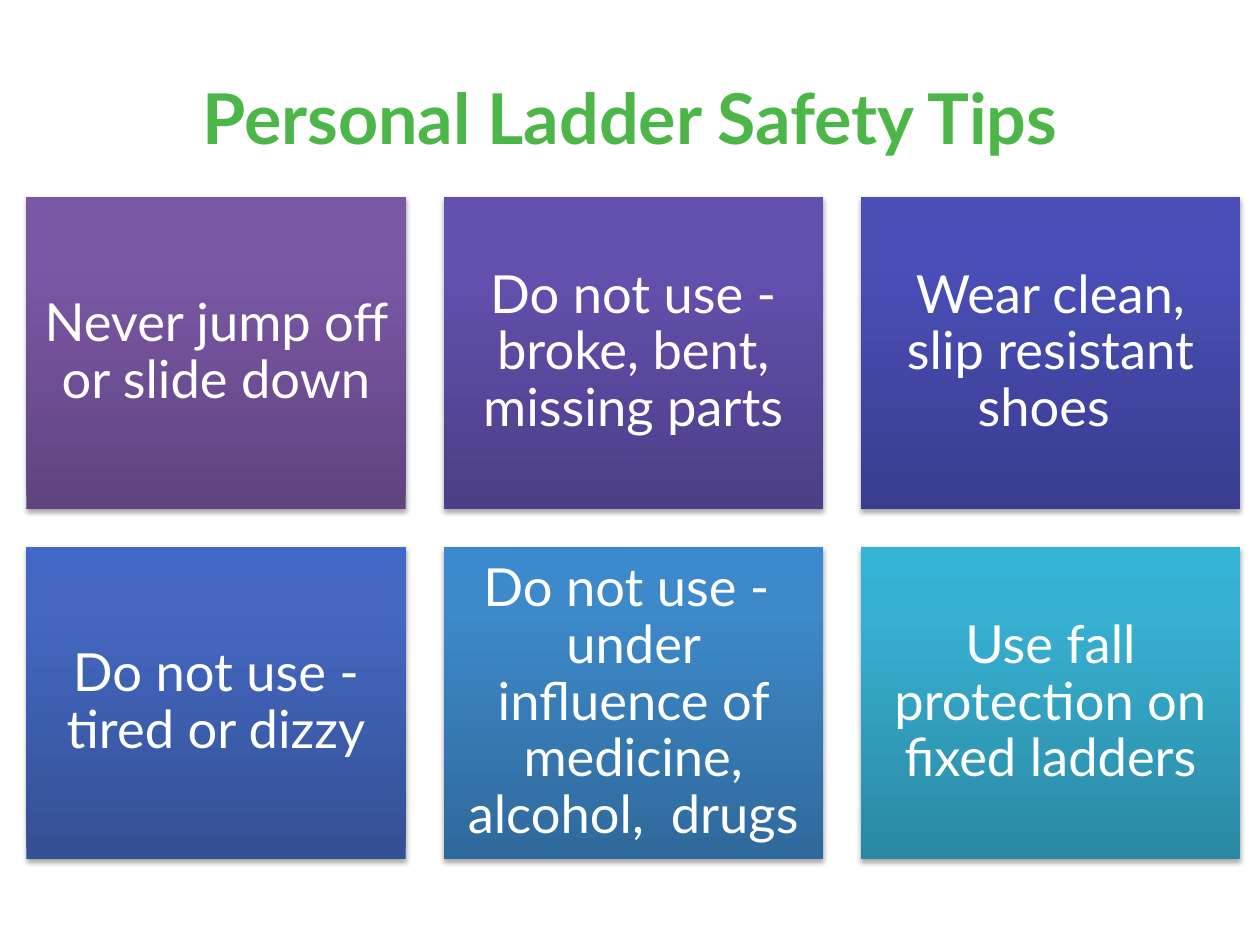
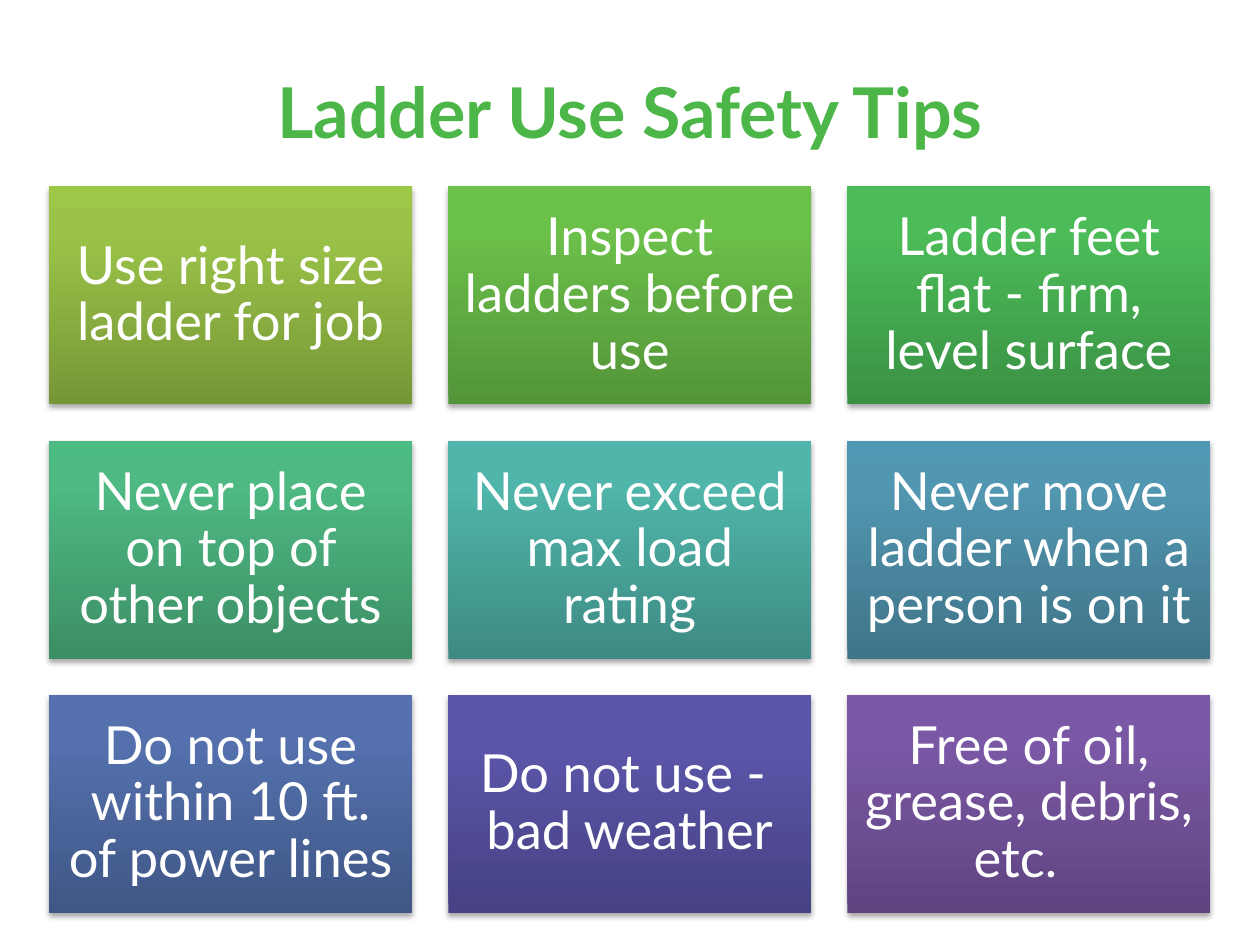
from lxml import etree
from pptx import Presentation
from pptx import util as u
from pptx.dml.color import RGBColor
from pptx.enum import shapes, text
from pptx.oxml.ns import qn

FONT = "Lato"
TITLE_GREEN = "4CB748"
WHITE = "FFFFFF"
COLUMNS = 3
GAP_SHARE = 0.1  # gap between tiles, as a share of tile width

# Each tile: text, then gradient colours from bottom to top
PERSONAL_TIPS = [
    ("Never jump off or slide down", "5F4480", "7B58A6", "7C57A8"),
    ("Do not use - broke, bent, missing parts", "4D3E87", "6451AF", "6450B2"),
    ("Wear clean, slip resistant shoes ", "393D8E", "4A4FB8", "484EBB"),
    ("Do not use - tired or dizzy", "345094", "4468C1", "4168C4"),
    ("Do not use -  under influence of medicine, alcohol,  drugs",
     "2F699B", "3D89C9", "3B8ACD"),
    ("Use fall protection on fixed ladders", "2A88A2", "37B1D2", "34B4D6"),
]
USE_TIPS = [
    ("Use right size ladder for job", "779737", "9BC348", "9DC746"),
    ("Inspect ladders before use", "539439", "6BC04A", "6BC348"),
    ("Ladder feet flat - firm, level surface", "3A9144", "4CBC58", "4ABF57"),
    ("Never place on top of other objects", "3C8E65", "4EB983", "4CBC84"),
    ("Never exceed max load rating", "3D8B83", "50B5AA", "4EB8AC"),
    ("Never move ladder when a person is on it", "3F7489", "5297B1", "5098B4"),
    ("Do not use within 10 ft. of power lines", "405786", "5471AE", "5271B0"),
    ("Do not use -  bad weather", "464283", "5B56AA", "5A55AC"),
    ("Free of oil, grease, debris, etc.  ", "5F4480", "7B58A6", "7C57A8"),
]


def rgb(value):
    return RGBColor.from_string(value)


def add_child(parent, tag, **attributes):
    return etree.SubElement(parent, qn(tag), attributes)


def place(sp, left, top, width, height):
    sp.left, sp.top, sp.width, sp.height = map(u.Inches, (left, top, width, height))


def write(sp, words, size, color, bold=False):
    tf = sp.text_frame
    tf.text = words
    tf.word_wrap = True
    tf.auto_size = text.MSO_AUTO_SIZE.NONE
    tf.vertical_anchor = text.MSO_ANCHOR.MIDDLE
    p = tf.paragraphs[0]
    p.alignment = text.PP_ALIGN.CENTER
    font = p.runs[0].font
    font.name, font.size, font.bold = FONT, u.Pt(size), bold
    font.color.rgb = rgb(color)
    return tf


def fill_gradient(sp, colors):
    """Run the colours upwards, with stops at 0, 80 and 100 %."""
    sp.fill.gradient()
    sp.fill.gradient_angle = 90
    stops = sp._element.spPr.find(qn("a:gradFill")).find(qn("a:gsLst"))
    for stop in list(stops):
        stops.remove(stop)
    for percent, color in zip((0, 80, 100), colors):
        stop = add_child(stops, "a:gs", pos=str(percent * 1000))
        add_child(stop, "a:srgbClr", val=color)


def drop_shadow(sp):
    sp.shadow.inherit = False
    effects = sp._element.spPr.find(qn("a:effectLst"))
    shadow = add_child(effects, "a:outerShdw", blurRad=str(u.Pt(3.1)),
                       dist=str(u.Pt(1.8)), dir="5400000", rotWithShape="0")
    color = add_child(shadow, "a:srgbClr", val="000000")
    add_child(color, "a:alpha", val="35000")


def add_tile(slide, box, words, colors, inset):
    sp = slide.shapes.add_shape(shapes.MSO_SHAPE.RECTANGLE, 0, 0, 0, 0)
    place(sp, *box)
    fill_gradient(sp, colors)
    sp.line.fill.background()
    drop_shadow(sp)
    tf = write(sp, words, 30, WHITE)
    tf.paragraphs[0].line_spacing = 0.9
    tf.margin_left = tf.margin_right = u.Inches(inset)
    tf.margin_top = tf.margin_bottom = u.Inches(inset)


def add_tips_slide(prs, title, title_top, tips, left, top, width, height, inset):
    slide = prs.slides.add_slide(prs.slide_layouts.get_by_name("Title Only"))
    gap = GAP_SHARE * width
    for i, (words, *colors) in enumerate(tips):
        row, column = divmod(i, COLUMNS)
        box = (left + column * (width + gap), top + row * (height + gap), width, height)
        add_tile(slide, box, words, colors, inset)
    place(slide.shapes.title, 0.5, title_top, 9, 1.25)
    write(slide.shapes.title, title, 40, TITLE_GREEN, bold=True)


def main():
    prs = Presentation()
    prs.slide_width, prs.slide_height = u.Inches(10), u.Inches(7.5)
    add_tips_slide(prs, "Personal Ladder Safety Tips", 0.3, PERSONAL_TIPS,
                   left=0.21, top=1.56, width=3.01, height=2.48, inset=0.1)
    add_tips_slide(prs, "Ladder Use Safety Tips", 0.25, USE_TIPS,
                   left=0.39, top=1.48, width=2.88, height=1.73, inset=0.12)
    prs.save("out.pptx")


if __name__ == "__main__":
    main()
